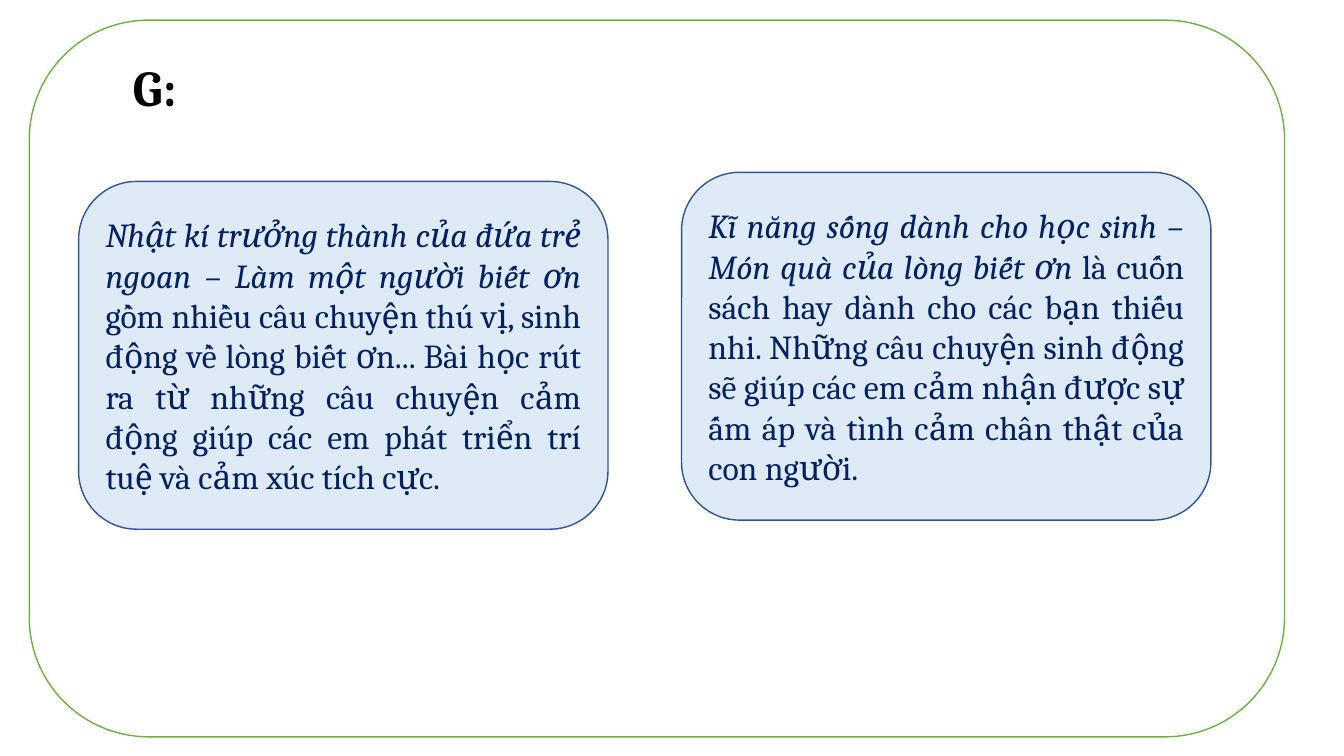
import pptx
import pptx.util
import pptx.dml.color
import pptx.enum.shapes
import pptx.enum.text

Inches = pptx.util.Inches
Pt = pptx.util.Pt
Align = pptx.enum.text.PP_ALIGN

TITLE = "G:"
BOOKS = [
    (0.78, 1.8, [
        ("Nhật kí trưởng thành của đứa trẻ ngoan – Làm một người biết ơn", True),
        (" gồm nhiều câu chuyện thú vị, sinh động về lòng biết ơn... Bài học rút ra "
         "từ những câu chuyện cảm động giúp các em phát triển trí tuệ và cảm xúc "
         "tích cực.", False),
    ]),
    (6.76, 1.71, [
        ("Kĩ năng sống dành cho học sinh – Món quà của lòng biết ơn ", True),
        ("là cuốn sách hay dành cho các bạn thiếu nhi. Những câu chuyện sinh động "
         "sẽ giúp các em cảm nhận được sự ấm áp và tình cảm chân thật của con "
         "người.", False),
    ]),
]
CARD = (5.25, 3.45)
THEME = {
    "font": "Cambria", "title": 36, "body": 24,
    "white": "FFFFFF", "green": "70AD47", "pale": "DEEBF7",
    "edge": "325491", "navy": "002060", "black": "000000",
}


def color(name):
    return pptx.dml.color.RGBColor.from_string(THEME[name])


def add_panel(slide, box, fill, line):
    kind = pptx.enum.shapes.MSO_SHAPE.ROUNDED_RECTANGLE
    panel = slide.shapes.add_shape(kind, *map(Inches, box))
    panel.shadow.inherit = False
    panel.fill.solid()
    panel.fill.fore_color.rgb = color(fill)
    panel.line.color.rgb = color(line)
    panel.line.width = Pt(1)
    return panel


def add_run(para, text, size, ink, bold=False, italic=False):
    run = para.add_run()
    run.text = text
    font = run.font
    font.name = THEME["font"]
    font.size = Pt(THEME[size])
    font.color.rgb = color(ink)
    font.bold = bold
    font.italic = italic


def main():
    deck = pptx.Presentation()
    deck.slide_width = Inches(13.33)
    deck.slide_height = Inches(7.5)
    slide = deck.slides.add_slide(deck.slide_layouts[6])

    add_panel(slide, (0.29, 0.2, 12.45, 7.11), "white", "green")

    title = slide.shapes.add_textbox(*map(Inches, (1.22, 0.51, 1.6, 0.71)))
    title.text_frame.word_wrap = True
    add_run(title.text_frame.paragraphs[0], TITLE, "title", "black", bold=True)

    for left, top, runs in BOOKS:
        card = add_panel(slide, (left, top, *CARD), "pale", "edge")
        frame = card.text_frame
        frame.word_wrap = True
        frame.vertical_anchor = pptx.enum.text.MSO_ANCHOR.MIDDLE
        para = frame.paragraphs[0]
        para.alignment = Align.JUSTIFY
        para.space_after = Pt(5)
        for text, italic in runs:
            add_run(para, text, "body", "navy", italic=italic)

    deck.save("out.pptx")


if __name__ == "__main__":
    main()
